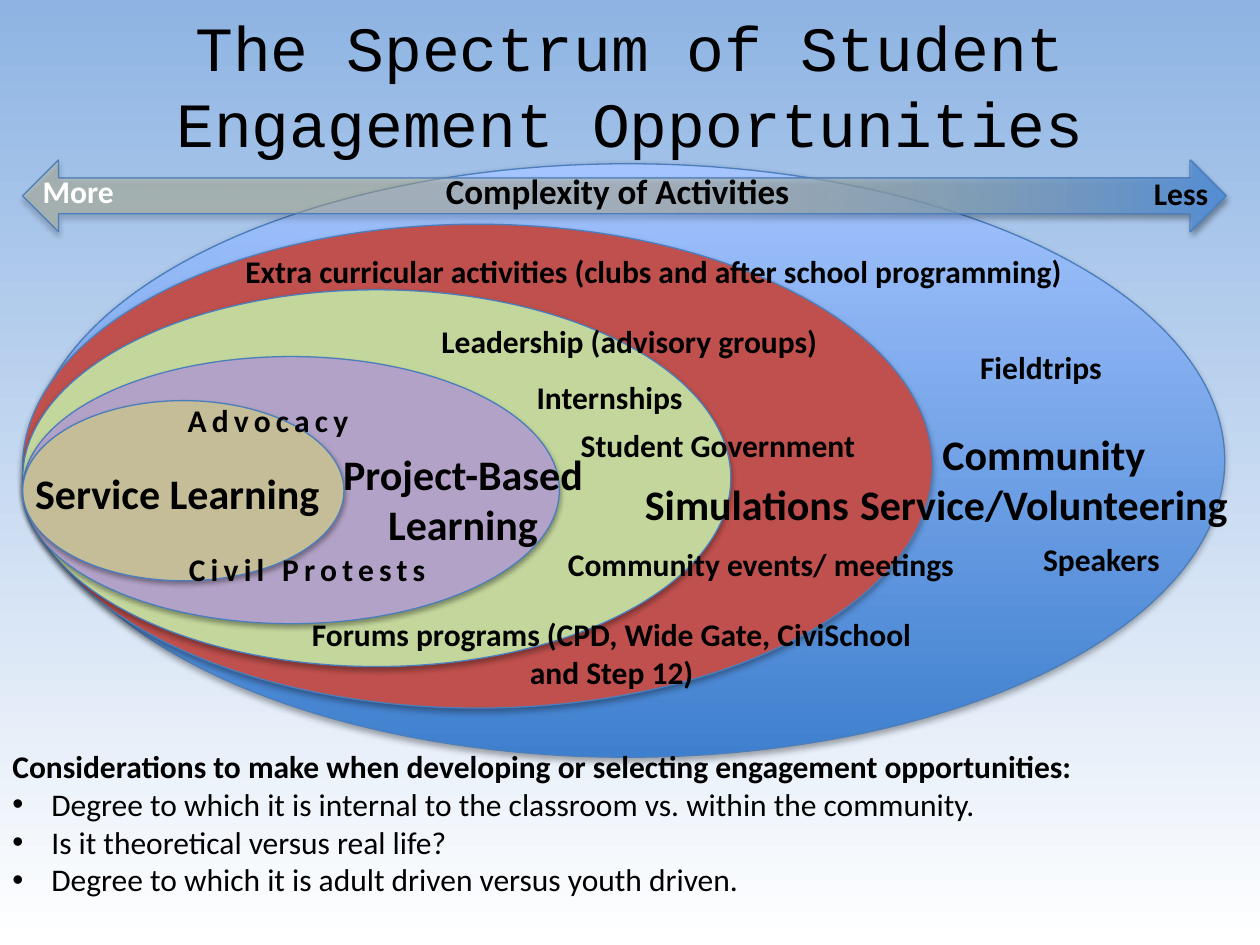
from lxml import etree
from pptx import Presentation
from pptx.dml.color import RGBColor
from pptx.enum.shapes import MSO_SHAPE
from pptx.enum.text import MSO_AUTO_SIZE, PP_ALIGN
from pptx.oxml.ns import qn
from pptx.util import Inches, Pt

ELLIPSE = MSO_SHAPE.OVAL
DOUBLE_ARROW = MSO_SHAPE.LEFT_RIGHT_ARROW
GROW = MSO_AUTO_SIZE.SHAPE_TO_FIT_TEXT
FIXED = MSO_AUTO_SIZE.NONE
LEFT, CENTER = PP_ALIGN.LEFT, PP_ALIGN.CENTER

BLACK = RGBColor(0x00, 0x00, 0x00)
WHITE = RGBColor(0xFF, 0xFF, 0xFF)
SKY = RGBColor(0x8E, 0xB4, 0xE3)
OUTLINE = RGBColor(0x4B, 0x7E, 0xBC)
DEEP_BLUE = RGBColor(0x3F, 0x80, 0xCE)
PALE_BLUE = RGBColor(0xA4, 0xC4, 0xFF)
ARROW_BLUE = RGBColor(0x55, 0x8E, 0xD5)
RED = RGBColor(0xC0, 0x50, 0x4D)
GREEN = RGBColor(0xC3, 0xD6, 0x9B)
PURPLE = RGBColor(0xB3, 0xA2, 0xC7)
TAN = RGBColor(0xC4, 0xBD, 0x97)


def write(paragraph, text, size=18, font="Calibri", color=BLACK, bold=True,
          align=LEFT, tracking=0, bullet=False):
    if bullet:
        properties = paragraph._p.get_or_add_pPr()
        properties.set("marL", str(Inches(0.31)))
        properties.set("indent", str(-Inches(0.31)))
        etree.SubElement(properties, qn("a:buFont")).set("typeface", "Arial")
        etree.SubElement(properties, qn("a:buChar")).set("char", "•")
    paragraph.alignment = align
    run = paragraph.add_run()
    run.text = text
    run.font.size = Pt(size)
    run.font.name = font
    run.font.bold = bold
    run.font.color.rgb = color
    if tracking:
        run._r.get_or_add_rPr().set("spc", str(tracking * 100))


class SpectrumSlide:
    def __init__(self, slide):
        self.slide = slide

    def gradient(self, fill, stops, angle):
        fill.gradient()
        fill.gradient_angle = angle
        for stop, (position, color) in zip(fill.gradient_stops, stops):
            stop.position = position
            stop.color.rgb = color

    def shadow(self, shape):
        shape.shadow.inherit = False
        effects = shape._element.spPr.find(qn("a:effectLst"))
        outer = etree.SubElement(effects, qn("a:outerShdw"), blurRad=str(Pt(3.1)),
                                 dist=str(Pt(1.8)), dir="5400000", rotWithShape="0")
        tint = etree.SubElement(outer, qn("a:srgbClr"), val=str(BLACK))
        etree.SubElement(tint, qn("a:alpha"), val="35000")

    def shape(self, kind, box, color=None, stops=None, angle=0):
        shape = self.slide.shapes.add_shape(kind, *map(Inches, box))
        if stops:
            self.gradient(shape.fill, stops, angle)
        else:
            shape.fill.solid()
            shape.fill.fore_color.rgb = color
        shape.line.color.rgb = OUTLINE
        shape.line.width = Pt(0.75)
        self.shadow(shape)
        return shape

    def text(self, box, *lines, wrap=True, auto_size=GROW, **style):
        frame = self.slide.shapes.add_textbox(*map(Inches, box)).text_frame
        frame.word_wrap = wrap
        frame.auto_size = auto_size
        for number, line in enumerate(lines):
            paragraph = frame.add_paragraph() if number else frame.paragraphs[0]
            write(paragraph, line, **style)
        return frame


def main():
    deck = Presentation()
    deck.slide_width, deck.slide_height = Inches(10), Inches(7.5)
    spectrum = SpectrumSlide(deck.slides.add_slide(deck.slide_layouts[6]))
    spectrum.gradient(spectrum.slide.background.fill, [(0, SKY), (1, WHITE)], 270)

    spectrum.text((0, 0.02, 10, 1.21),
                  "The Spectrum of Student Engagement Opportunities",
                  size=36, font="Courier New", bold=False, align=CENTER,
                  auto_size=FIXED)

    spectrum.shape(ELLIPSE, (0.24, 1.3, 9.48, 4.71),
                   stops=[(0, DEEP_BLUE), (1, PALE_BLUE)], angle=90)
    for top, width, height, color in (
        (1.78, 7.22, 3.84, RED),
        (2.3, 5.62, 2.99, GREEN),
        (2.83, 4.26, 2.12, PURPLE),
        (3.18, 2.55, 1.43, TAN),
    ):
        spectrum.shape(ELLIPSE, (0.18, top, width, height), color)

    spectrum.text((6.72, 3.35, 3.13, 0.91), "Community Service/Volunteering",
                  size=24, align=CENTER)
    spectrum.text((0.18, 3.66, 2.55, 0.5), "Service Learning", size=24)
    spectrum.text((5.02, 3.75, 1.84, 0.5), "Simulations", size=24)
    spectrum.text((2.62, 3.51, 2.11, 0.91), "Project-Based", "Learning",
                  size=24, align=CENTER)
    spectrum.text((1.39, 3.13, 1.49, 0.4), "Advocacy", tracking=3)

    for box, activity in (
        ((7.68, 2.71, 1.18, 0.4), "Fieldtrips"),
        ((8.18, 4.24, 1.15, 0.4), "Speakers"),
        ((4.16, 2.95, 1.38, 0.4), "Internships"),
        ((4.51, 3.33, 2.41, 0.4), "Student Government"),
    ):
        spectrum.text(box, activity, wrap=False)

    for box, activity in (
        ((2.18, 4.83, 5.35, 0.71),
         "Forums programs (CPD, Wide Gate, CiviSchool and Step 12)"),
        ((3.86, 4.28, 4.36, 0.4), "Community events/ meetings"),
        ((1.44, 1.95, 7.5, 0.4),
         "Extra curricular activities (clubs and after school programming)"),
        ((3.17, 2.51, 3.65, 0.4), "Leadership (advisory groups)"),
    ):
        spectrum.text(box, activity, align=CENTER)

    considerations = spectrum.text(
        (0, 5.88, 10, 1.31),
        "Considerations to make when developing or selecting engagement opportunities:")
    for question in (
        "Degree to which it is internal to the classroom vs. within the community.",
        "Is it theoretical versus real life?",
        "Degree to which it is adult driven versus youth driven.",
    ):
        write(considerations.add_paragraph(), question, bold=False, bullet=True)

    complexity = spectrum.shape(DOUBLE_ARROW, (0.18, 1.27, 9.55, 0.57),
                                stops=[(0.5, TAN), (1, ARROW_BLUE)])
    faded = complexity._element.spPr.find(".//" + qn("a:gs")).find(qn("a:srgbClr"))
    etree.SubElement(faded, qn("a:alpha"), val="44000")
    spectrum.text((3.44, 1.3, 3.12, 0.44), "Complexity of Activities", size=20)
    spectrum.text((9.06, 1.33, 0.81, 0.4), "Less")
    spectrum.text((0.24, 1.32, 0.81, 0.4), "More", color=WHITE)
    spectrum.text((1.4, 4.32, 2.11, 0.4), "Civil Protests", wrap=False, tracking=3)

    deck.save("out.pptx")


if __name__ == "__main__":
    main()
